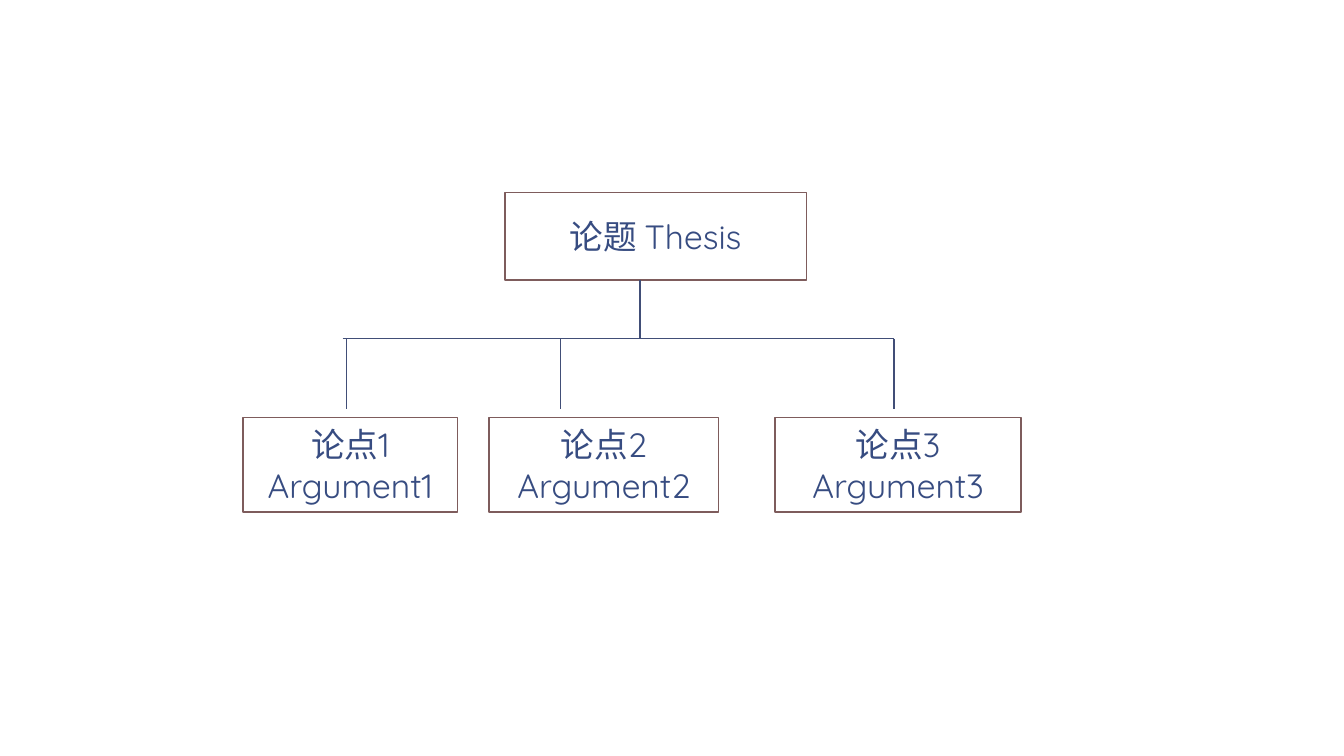
"""Build a slide with a thesis box branching into three argument boxes."""
from lxml import etree
from pptx import Presentation
from pptx.dml.color import RGBColor
from pptx.enum.shapes import MSO_CONNECTOR, MSO_SHAPE
from pptx.enum.text import MSO_ANCHOR, PP_ALIGN
from pptx.oxml.ns import qn
from pptx.util import Pt

RECTANGLE = MSO_SHAPE.RECTANGLE
STRAIGHT = MSO_CONNECTOR.STRAIGHT
MIDDLE = MSO_ANCHOR.MIDDLE
CENTER = PP_ALIGN.CENTER
COLORS = {"background": "FFFFFF", "border": "7E5C5C", "branch": "414E77", "text": "374C81"}
FONT = "Quicksand"


def color(name):
    return RGBColor.from_string(COLORS[name])


presentation = Presentation()
presentation.slide_width = Pt(960)
presentation.slide_height = Pt(540)
slide = presentation.slides.add_slide(presentation.slide_layouts[6])
slide.background.fill.solid()
slide.background.fill.fore_color.rgb = color("background")

thesis_left, thesis_top, thesis_width, thesis_height = 360.7, 137.5, 215.3, 62.4
argument_top, argument_height = 298.1, 67.7
stem_x, bar_left, bar_y, drop_bottom = 457.2, 244.8, 241.9, 292.3
arguments = [(173.5, 153.4, 247.7), (349.2, 164.2, 400.3), (553.7, 175.7, 638.6)]
bar_right = arguments[-1][2]

boxes = [("论题 Thesis", thesis_left, thesis_top, thesis_width, thesis_height)]
branches = [
    (stem_x, thesis_top + thesis_height, stem_x, bar_y),
    (bar_left, bar_y, bar_right, bar_y),
]
for number, (left, width, drop_x) in enumerate(arguments, start=1):
    text = f"论点{number}\nArgument{number}"
    boxes.append((text, left, argument_top, width, argument_height))
    branches.append((drop_x, bar_y, drop_x, drop_bottom))

for text, left, top, width, height in boxes:
    shape = slide.shapes.add_shape(RECTANGLE, Pt(left), Pt(top), Pt(width), Pt(height))
    shape.shadow.inherit = False
    shape.fill.solid()
    shape.fill.fore_color.rgb = color("background")
    shape.line.color.rgb = color("border")
    shape.line.width = Pt(1)
    text_frame = shape.text_frame
    text_frame.text = text
    text_frame.word_wrap = True
    text_frame.vertical_anchor = MIDDLE
    for paragraph in text_frame.paragraphs:
        paragraph.alignment = CENTER
        for run in paragraph.runs:
            run.font.name = FONT
            run.font.size = Pt(24)
            run.font.color.rgb = color("text")

for start_x, start_y, end_x, end_y in branches:
    connector = slide.shapes.add_connector(
        STRAIGHT, Pt(start_x), Pt(start_y), Pt(end_x), Pt(end_y)
    )
    connector.line.color.rgb = color("branch")
    connector.line.width = Pt(1)
    etree.SubElement(connector._element.spPr, qn("a:effectLst"))

presentation.save("out.pptx")
